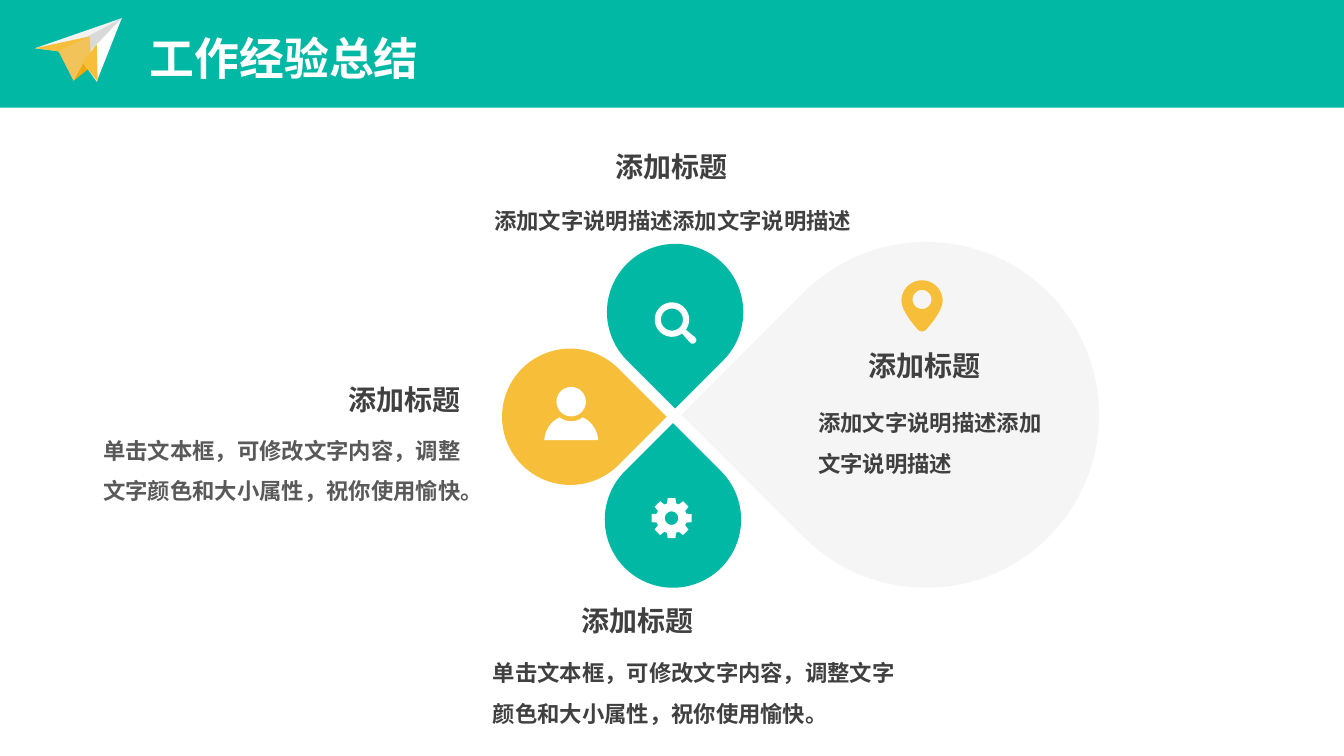
from dataclasses import dataclass
from math import cos, radians, sin

from lxml.etree import SubElement
from pptx import Presentation
from pptx.dml.color import RGBColor as Rgb
from pptx.enum.shapes import MSO_SHAPE as Preset
from pptx.enum.text import MSO_AUTO_SIZE as AutoSize, PP_ALIGN as Align
from pptx.oxml.ns import qn
from pptx.util import Pt


@dataclass(frozen=True)
class Theme:
    font: str = "Arial"
    teal: str = "01B8A5"
    amber: str = "F7BE3A"
    white: str = "FFFFFF"
    mist: str = "F2F2F2"
    dark: str = "404040"
    grey: str = "595959"
    fold: str = "D9D9D9"
    deep_amber: str = "F0A90A"
    pale_amber: str = "F1C359"
    banner_size: int = 32
    heading_size: int = 20
    body_size: int = 16


THEME = Theme()


def apply(target, values):
    for name, value in values.items():
        setattr(target, name, value)


def paint(shape, color, opacity=100):
    shape.shadow.inherit = False
    shape.fill.solid()
    shape.fill.fore_color.rgb = Rgb.from_string(color)
    shape.line.fill.background()
    if opacity < 100:
        tint = shape._element.spPr.find(".//" + qn("a:srgbClr"))
        SubElement(tint, qn("a:alpha")).set("val", str(opacity * 1000))


def add_preset(slide, preset, box, color, opacity=100, rotation=0):
    shape = slide.shapes.add_shape(preset, *map(Pt, box))
    shape.rotation = rotation
    paint(shape, color, opacity)


def add_outline(slide, origin, contours, color):
    placed = [[(Pt(origin[0] + x), Pt(origin[1] + y)) for x, y in contour]
              for contour in contours]
    builder = slide.shapes.build_freeform(*placed[0][0], scale=1)
    builder.add_line_segments(placed[0][1:], close=True)
    for contour in placed[1:]:
        builder.move_to(*contour[0])
        builder.add_line_segments(contour[1:], close=True)
    paint(builder.convert_to_shape(), color)


def add_text(slide, box, text, size, color, align=Align.LEFT, wrap=True, spacing=None):
    frame = slide.shapes.add_textbox(*map(Pt, box)).text_frame
    apply(frame, {"text": text, "word_wrap": wrap,
                  "auto_size": AutoSize.SHAPE_TO_FIT_TEXT})
    paragraph = frame.paragraphs[0]
    apply(paragraph, {"alignment": align, "line_spacing": spacing})
    font = paragraph.runs[0].font
    apply(font, {"name": THEME.font, "size": Pt(size), "bold": True})
    font.color.rgb = Rgb.from_string(color)


def arc(cx, cy, radius, start=0, end=360, steps=36):
    angles = [radians(start + (end - start) * i / steps) for i in range(steps + 1)]
    return [(cx + radius * cos(a), cy + radius * sin(a)) for a in angles]


def curve(a, b, c, d, steps=12):
    weights = [((1 - t) ** 3, 3 * t * (1 - t) ** 2, 3 * t * t * (1 - t), t ** 3)
               for t in (i / steps for i in range(steps + 1))]
    return [tuple(sum(w * p[axis] for w, p in zip(row, (a, b, c, d)))
                  for axis in (0, 1)) for row in weights]


def mirror(points):
    return [(-x, y) for x, y in reversed(points)]


def magnifier():
    return [arc(0, 0, 12.3, 54, 396) + arc(14.8, 14.6, 2.6, -45, 135, 10),
            arc(0, 0, 7.9)]


def person():
    shoulder = (curve((-19.2, 27.5), (-19.2, 24.8), (-17.6, 15.4), (-8.2, 11.2))
                + curve((-8.2, 11.2), (-5.8, 13), (-3, 14), (0, 14)))
    return [arc(0, 0, 10.5), shoulder + mirror(shoulder)]


def gear():
    rim = [(radius * cos(radians(tooth * 45 + turn)), radius * sin(radians(tooth * 45 + turn)))
           for tooth in range(8)
           for turn, radius in ((-17, 11), (-11, 14.6), (11, 14.6), (17, 11))]
    return [rim, arc(0, 0, 4.8)]


def pin():
    side = curve((14.7, 0), (14.7, 7.9), (3.2, 20.2), (3.2, 20.2))
    tip = curve((3.2, 20.2), (1.2, 22.4), (-1.2, 22.4), (-3.2, 20.2))
    return [arc(0, 0, 14.7, 180, 360) + side + tip + mirror(side), arc(0, -1, 6.8)]


def header(slide, box):
    left, top, _, height = box
    add_preset(slide, Preset.RECTANGLE, box, THEME.teal)
    plane = (left + 25, top + 10)
    nose, wing_tip = (62, 3), (0, 24.5)
    facets = [
        (THEME.fold, [nose, (16.8, 25.3), (27.6, 47.6), (34.8, 33.9)]),
        (THEME.deep_amber, [(34.8, 33.9), (27.6, 47.6), (38.4, 39)]),
        (THEME.white, [nose, (33.3, 33.2), (44.1, 48.3)]),
        (THEME.mist, [nose, wing_tip, (17.5, 26.7)]),
        (THEME.amber, [(17.5, 26.7), (39, 16), wing_tip]),
        (THEME.pale_amber, [(16.8, 26.7), (39, 16), (39.8, 27.4), (34.8, 34.6), (27.6, 47.6)]),
        (THEME.amber, [(34, 34.6), (44.1, 21.7), (44.8, 48.3)]),
    ]
    for color, facet in facets:
        add_outline(slide, plane, [facet], color)
    add_text(slide, (left + 100, top + 18.7, 208, 46), "工作经验总结",
             THEME.banner_size, THEME.white, wrap=False)


def petal(slide, box, rotation, color, icon, icon_color, shift, opacity=100):
    left, top, width, height = box
    add_preset(slide, Preset.TEAR, box, color, opacity, rotation)
    center = (left + width / 2 + shift[0], top + height / 2 + shift[1])
    add_outline(slide, center, icon(), icon_color)


def caption(slide, box, body, indent, drop, align=Align.LEFT, color=THEME.dark):
    left, top, width, height = box
    add_text(slide, (left, top + drop, width, height - drop), body,
             THEME.body_size, color, align, spacing=1.5)
    add_text(slide, (left + indent, top, 95, 31.5), "添加标题", THEME.heading_size,
             THEME.dark, Align.RIGHT if align == Align.RIGHT else Align.LEFT, wrap=False)


def clover(slide, box):
    left, top, _, _ = box
    small, large = 97.4, 247
    petals = [
        (178, 0, large, 225, THEME.mist, pin, THEME.amber, (-2.9, -81.4), 70),
        (73.5, 1.4, small, 135, THEME.teal, magnifier, THEME.white, (-2.2, 5.4), 100),
        (72, 149.6, small, 315, THEME.teal, gear, THEME.white, (-1, -1), 100),
        (-1.4, 76.2, small, 45, THEME.amber, person, THEME.white, (0.7, -10.8), 100),
    ]
    for x, y, size, *style in petals:
        petal(slide, (left + x, top + y, size, size), *style)


def experience_slide(slide, box):
    left, top, width, _ = box
    header(slide, (left, top, width, 77))
    clover(slide, (left + 360, top + 172.8, 426, 247))
    brief = "添加文字说明描述添加文字说明描述"
    guide = "单击文本框，可修改文字内容，调整文字颜色和大小属性，祝你使用愉快。"
    captions = [
        ((577.4, 245.5, 182.2, 96.5), brief, 36, 33.9),
        ((345, 427.7, 306.7, 92), guide, 63.3, 30.2),
        ((65.5, 270, 270.7, 90.7), guide, 175.7, 28.8, Align.RIGHT, THEME.grey),
        ((326.2, 103, 308.9, 64.8), brief, 106.5, 31.6, Align.CENTER),
    ]
    for (x, y, *size), *content in captions:
        caption(slide, (left + x, top + y, *size), *content)


def main():
    deck = Presentation()
    apply(deck, {"slide_width": Pt(960), "slide_height": Pt(540)})
    slide = deck.slides.add_slide(deck.slide_layouts[6])
    experience_slide(slide, (0, 0, 960, 540))
    deck.save("out.pptx")


if __name__ == "__main__":
    main()
